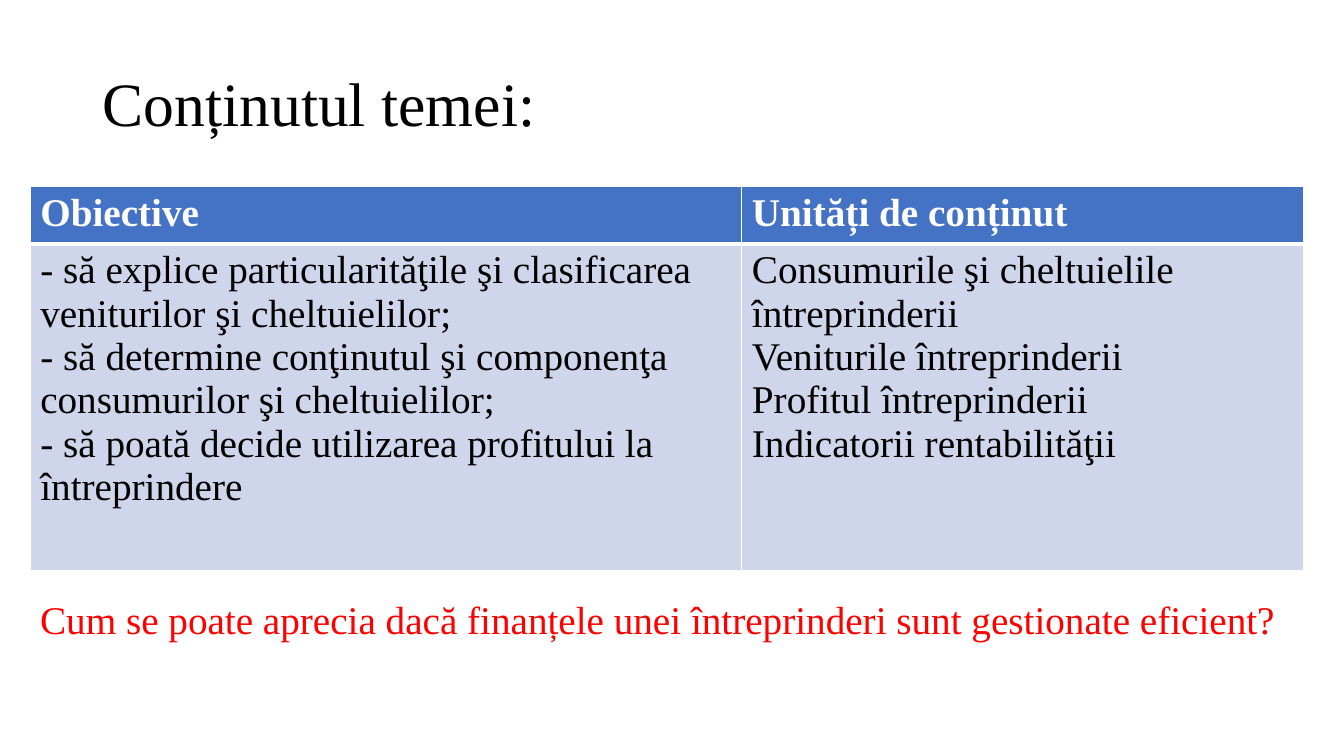
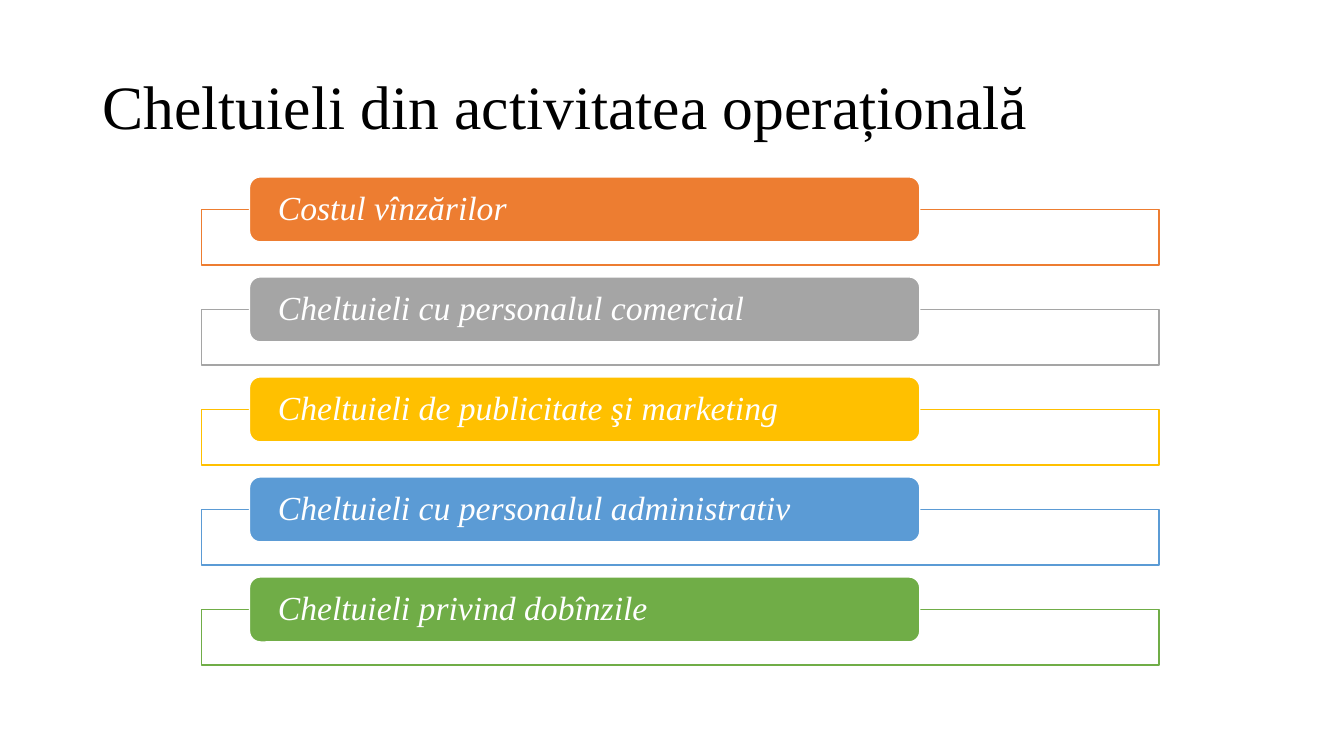
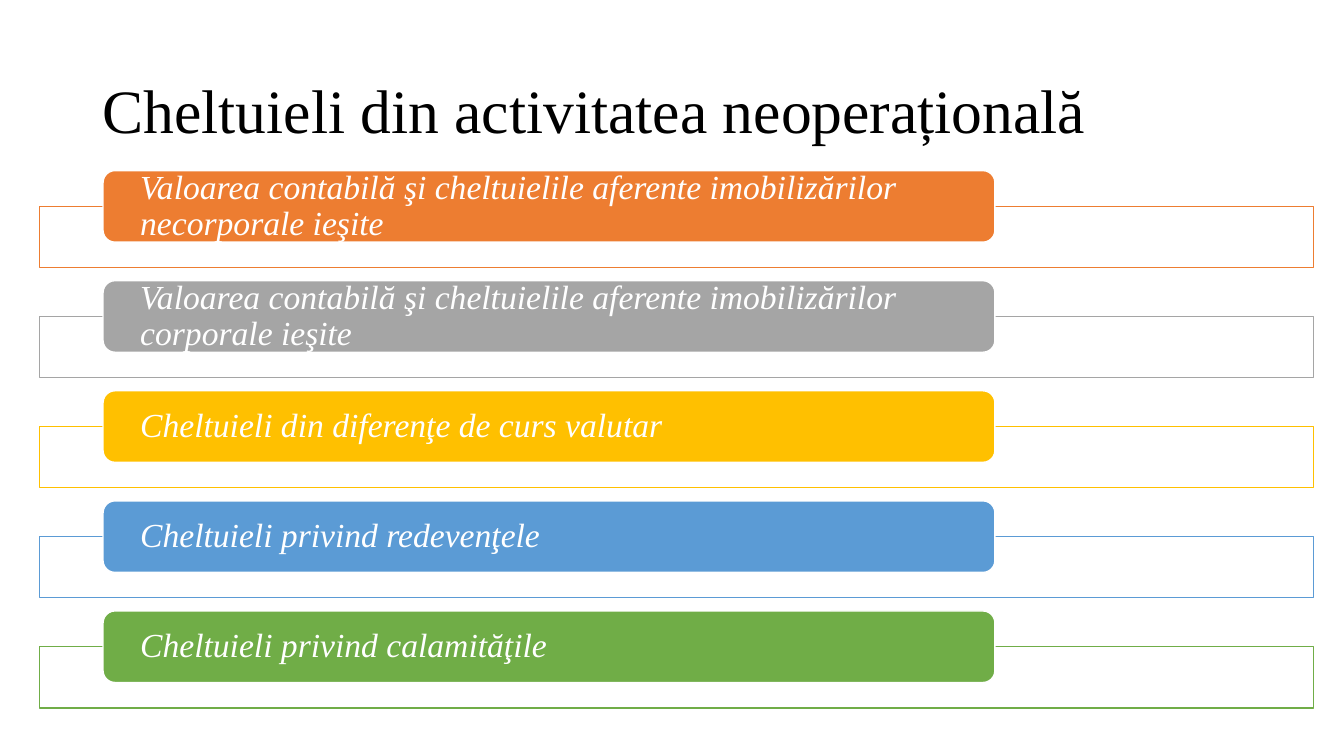
import pptx
import pptx.dml.color
import pptx.enum.shapes
import pptx.enum.text
import pptx.oxml
import pptx.oxml.ns
import pptx.util

RGB = pptx.dml.color.RGBColor
SHAPE = pptx.enum.shapes.MSO_SHAPE
MIDDLE = pptx.enum.text.MSO_ANCHOR.MIDDLE
LEFT = pptx.enum.text.PP_ALIGN.LEFT

FONT = "Times New Roman"
BLACK = RGB(0x00, 0x00, 0x00)
WHITE = RGB(0xFF, 0xFF, 0xFF)
RED = RGB(0xFF, 0x00, 0x00)
HEADER_BLUE = RGB(0x44, 0x72, 0xC4)
BODY_BLUE = RGB(0xCF, 0xD5, 0xEA)
ACCENTS = (
    RGB(0xED, 0x7D, 0x31),
    RGB(0xA5, 0xA5, 0xA5),
    RGB(0xFF, 0xC0, 0x00),
    RGB(0x5B, 0x9B, 0xD5),
    RGB(0x70, 0xAD, 0x47),
)

SLIDE_WIDTH = pptx.util.Inches(13.33)
SLIDE_HEIGHT = pptx.util.Inches(7.5)

TITLE_LEFT, TITLE_WIDTH = 6.9, 86.25
TEXT_HEIGHT = 19.33
TABLE_LEFT, TABLE_TOP = 2.25, 24.67
COLUMN_WIDTHS = (52.95, 41.77)
ROW_HEIGHTS = (7, 43.2)

# Proportions of the list, relative to its frames
BAR_INDENT, BAR_WIDTH, BAR_INSET = 0.05, 0.7, 0.03
BAR_HEIGHT, FRAME_PITCH = 1.17, 1.8


def across(percent):
    return round(SLIDE_WIDTH * percent / 100)


def down(percent):
    return round(SLIDE_HEIGHT * percent / 100)


def place(left, top, width, height):
    """Turn shares of the slide, in percent, into lengths."""
    return across(left), down(top), across(width), down(height)


def write(frame, lines, size, color, bold=False, italic=False, spacing=None):
    frame.word_wrap = True
    for index, line in enumerate(lines):
        paragraph = frame.paragraphs[0] if index == 0 else frame.add_paragraph()
        paragraph.text = line
        paragraph.alignment = LEFT
        paragraph.line_spacing = spacing
        font = paragraph.font
        font.name, font.size = FONT, pptx.util.Pt(size)
        font.bold, font.italic = bold, italic
        font.color.rgb = color


def add_text(slide, text, box, size, color):
    frame = slide.shapes.add_textbox(*place(*box)).text_frame
    frame.vertical_anchor = MIDDLE
    write(frame, [text], size, color, spacing=0.9)


def add_titled_slide(deck, title, top):
    slide = deck.slides.add_slide(deck.slide_layouts[6])
    add_text(slide, title, (TITLE_LEFT, top, TITLE_WIDTH, TEXT_HEIGHT), 44, BLACK)
    return slide


def add_block(slide, kind, box, fill, line):
    block = slide.shapes.add_shape(kind, *box)
    block.shadow.inherit = False
    block.fill.solid()
    block.fill.fore_color.rgb = fill
    block.line.color.rgb = line
    block.line.width = pptx.util.Pt(1)
    return block


def add_bar_list(slide, items, left, top, width, frame_height):
    """Stack outlined frames, each with a bar centred on its top edge."""
    bar_height = BAR_HEIGHT * frame_height
    for index, (item, accent) in enumerate(zip(items, ACCENTS)):
        frame_top = top + index * FRAME_PITCH * frame_height
        frame_box = place(left, frame_top, width, frame_height)
        add_block(slide, SHAPE.RECTANGLE, frame_box, WHITE, accent)
        bar_box = place(left + BAR_INDENT * width, frame_top - bar_height / 2,
                        BAR_WIDTH * width, bar_height)
        bar = add_block(slide, SHAPE.ROUNDED_RECTANGLE, bar_box, accent, WHITE)
        label = bar.text_frame
        label.margin_left = label.margin_right = across(BAR_INSET * width * 0.88)
        label.margin_top = label.margin_bottom = 0
        label.vertical_anchor = MIDDLE
        write(label, [item], 24, WHITE, italic=True, spacing=0.9)


def set_borders(cell, **widths):
    """Draw white borders; widths in points are keyed by side: L, R, T, B."""
    properties = cell._tc.get_or_add_tcPr()
    for side, width in widths.items():
        properties.append(pptx.oxml.parse_xml(
            f'<a:ln{side} {pptx.oxml.ns.nsdecls("a")} w="{pptx.util.Pt(width)}">'
            f'<a:solidFill><a:srgbClr val="{WHITE}"/></a:solidFill></a:ln{side}>'))


def add_content_table(slide, headings, contents):
    box = place(TABLE_LEFT, TABLE_TOP, sum(COLUMN_WIDTHS), sum(ROW_HEIGHTS))
    table = slide.shapes.add_table(2, len(headings), *box).table
    for row, height in zip(table.rows, ROW_HEIGHTS):
        row.height = down(height)
    for index, width in enumerate(COLUMN_WIDTHS):
        table.columns[index].width = across(width)
        header, body = table.cell(0, index), table.cell(1, index)
        set_borders(header, L=1, R=1, T=1, B=3)
        set_borders(body, L=1, R=1, T=3, B=1)
        for cell, fill in ((header, HEADER_BLUE), (body, BODY_BLUE)):
            cell.fill.solid()
            cell.fill.fore_color.rgb = fill
        write(header.text_frame, [headings[index]], 28, WHITE, bold=True)
        write(body.text_frame, contents[index], 28, BLACK)


def main():
    deck = pptx.Presentation()
    deck.slide_width, deck.slide_height = SLIDE_WIDTH, SLIDE_HEIGHT

    contents = add_titled_slide(deck, "Conținutul temei:", 4.4)
    add_content_table(contents, ("Obiective", "Unități de conținut"), (
        ("- să explice particularităţile şi clasificarea veniturilor şi cheltuielilor;",
         "- să determine conţinutul şi componenţa consumurilor şi cheltuielilor;",
         "- să poată decide utilizarea profitului la întreprindere"),
        ("Consumurile şi cheltuielile întreprinderii",
         "Veniturile întreprinderii",
         "Profitul întreprinderii",
         "Indicatorii rentabilităţii"),
    ))
    add_text(
        contents,
        "Cum se poate aprecia dacă finanțele unei întreprinderi sunt gestionate eficient?",
        (TABLE_LEFT, 72.53, sum(COLUMN_WIDTHS), TEXT_HEIGHT), 28, RED)

    operating = add_titled_slide(deck, "Cheltuieli din activitatea operațională", 4.8)
    add_bar_list(operating, (
        "Costul vînzărilor",
        "Cheltuieli cu personalul comercial",
        "Cheltuieli de publicitate şi marketing",
        "Cheltuieli cu personalul administrativ",
        "Cheltuieli privind dobînzile",
    ), left=15, top=27.7, width=71.25, frame_height=7.35)

    non_operating = add_titled_slide(
        deck, "Cheltuieli din activitatea neoperațională", 5.33)
    add_bar_list(non_operating, (
        "Valoarea contabilă şi cheltuielile aferente imobilizărilor necorporale ieşite",
        "Valoarea contabilă şi cheltuielile aferente imobilizărilor corporale ieşite",
        "Cheltuieli din diferenţe de curs valutar",
        "Cheltuieli privind redevenţele",
        "Cheltuieli privind calamităţile",
    ), left=2.93, top=27.3, width=94.8, frame_height=8.09)

    deck.save("out.pptx")


if __name__ == "__main__":
    main()
